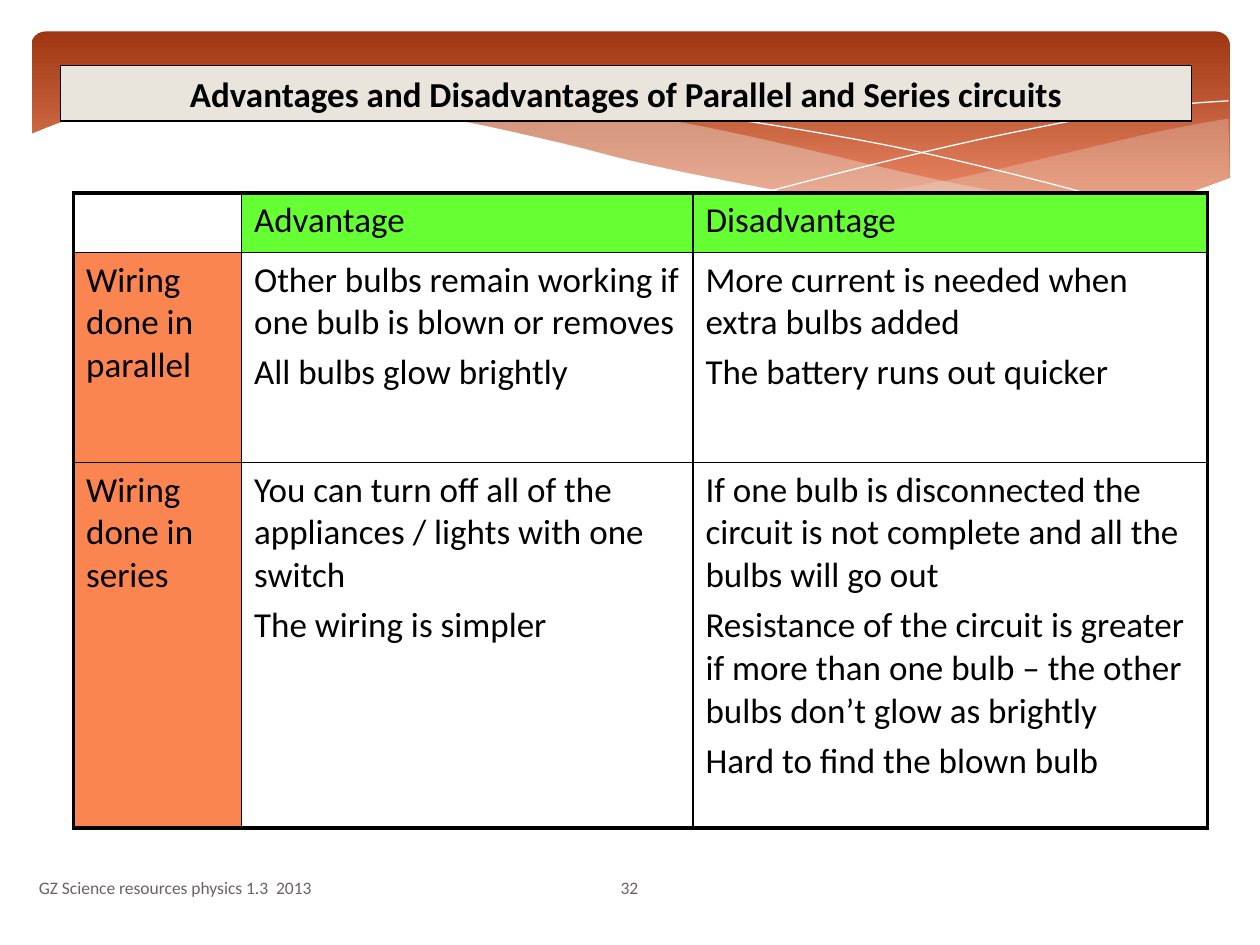
from dataclasses import dataclass

from lxml.etree import SubElement
from pptx import Presentation
from pptx.dml.color import RGBColor
from pptx.enum.shapes import MSO_SHAPE
from pptx.enum.text import MSO_ANCHOR, MSO_AUTO_SIZE, PP_ALIGN
from pptx.oxml.ns import qn
from pptx.util import Pt


@dataclass(frozen=True)
class Theme:
    font: str = "Calibri"
    text_size: float = 20
    footer_size: float = 10
    ink: str = "000000"
    muted: str = "696464"
    paper: str = "FFFFFF"
    sand: str = "E9E5DC"
    rust: str = "9E3611"
    coral: str = "EF8C6A"
    header: str = "66FF33"
    row_label: str = "FA8550"
    outer_rule: float = 2.25
    inner_rule: float = 1


THEME = Theme()

# Banner curves, as points that a smooth line passes through
PALE_WAVE = [(702, 67.7), (663, 75), (620, 85), (542, 103), (476, 115.2),
             (518, 120.2), (554, 123.1), (593, 123.8), (628, 121.7),
             (663, 115.2), (702.7, 101.5)]
BROAD_WAVE = [(643, 120.2), (602.6, 114.5), (558, 107.3), (508, 96.5),
              (453, 83.5), (400, 72), (352, 64), (302, 59), (260, 57.6),
              (206, 61.9), (246, 67.7), (291, 76.3), (353.5, 90.7),
              (407.5, 103), (468, 113.8), (520, 121), (565, 123.8),
              (603, 123.8), (643, 120.2)]
FALLING_LINE = [(222.5, 64.8), (254, 60.5), (299.5, 58.3), (352, 60.5),
                (400, 65.5), (458, 74.2), (523.4, 86.4), (598.3, 104.4),
                (653, 119.5)]
RISING_LINE = [(441.4, 108.7), (500.4, 93.6), (558.7, 79.9), (623.5, 67),
               (665.3, 60.5), (702, 57.6)]
WHITE_EDGE = [(703.4, 101.5), (669.6, 113), (630, 120.2), (582.5, 123.1),
              (535.7, 121), (481, 115.2), (417, 103.7), (362, 92.2),
              (322, 82.1), (263, 69.1), (210, 61.2), (165.6, 56.9),
              (127.4, 56.2), (85.7, 59), (48.2, 65.5), (16.6, 77)]
WHITE_CORNERS = [(16.6, 161.3), (703.4, 161.3)]

TABLE_ROWS = [
    [[], ["Advantage"], ["Disadvantage"]],
    [["Wiring done in parallel"],
     ["Other bulbs remain working if one bulb is blown or removes",
      "All bulbs glow brightly"],
     ["More current is needed when extra bulbs added",
      "The battery runs out quicker"]],
    [["Wiring done in series"],
     ["You can turn off all of the appliances / lights with one switch",
      "The wiring is simpler"],
     ["If one bulb is disconnected the circuit is not complete and all the "
      "bulbs will go out",
      "Resistance of the circuit is greater if more than one bulb – the other "
      "bulbs don’t glow as brightly",
      "Hard to find the blown bulb"]],
]
COLUMN_WIDTHS = [96, 258, 294]
ROW_HEIGHTS = [34, 120, 209]


def color(value):
    return RGBColor.from_string(value)


def write_text(frame, paragraphs, *, size=THEME.text_size, ink=THEME.ink,
               bold=False, align=PP_ALIGN.LEFT, gap=0):
    for index, words in enumerate(paragraphs):
        paragraph = frame.add_paragraph() if index else frame.paragraphs[0]
        paragraph.alignment = align
        paragraph.space_before = Pt(gap if index else 0)
        run = paragraph.add_run()
        run.text = words
        run.font.name = THEME.font
        run.font.size = Pt(size)
        run.font.bold = bold
        run.font.color.rgb = color(ink)


def smooth(points, steps=4):
    """Catmull-Rom curve through the points."""
    padded = [points[0], *points, points[-1]]
    curve = [points[0]]
    for a, b, c, d in zip(padded, padded[1:], padded[2:], padded[3:]):
        for step in range(1, steps + 1):
            t = step / steps
            curve.append(tuple(
                (2 * q + (r - p) * t + (2 * p - 5 * q + 4 * r - s) * t ** 2
                 + (3 * q - p - 3 * r + s) * t ** 3) / 2
                for p, q, r, s in zip(a, b, c, d)))
    return curve


def add_curve(slide, points, *, fill=None, opacity=100, line=None):
    (x, y), *rest = [(Pt(px), Pt(py)) for px, py in points]
    builder = slide.shapes.build_freeform(x, y)
    builder.add_line_segments(rest, close=fill is not None)
    curve = builder.convert_to_shape()
    curve.shadow.inherit = False
    if fill:
        curve.fill.solid()
        curve.fill.fore_color.rgb = color(fill)
        if opacity < 100:
            tint = curve.fill._xPr.find(f"{qn('a:solidFill')}/{qn('a:srgbClr')}")
            SubElement(tint, qn("a:alpha"), val=str(opacity * 1000))
    else:
        curve.fill.background()
    if line:
        curve.line.color.rgb = color(line)
        curve.line.width = Pt(0)
    else:
        curve.line.fill.background()


def add_banner(slide):
    panel = slide.shapes.add_shape(MSO_SHAPE.ROUNDED_RECTANGLE,
                                   Pt(18), Pt(18), Pt(684.7), Pt(112.3))
    panel.adjustments[0] = 0.07
    panel.shadow.inherit = False
    panel.line.fill.background()
    panel.fill.gradient()
    panel.fill.gradient_angle = 270
    stops = zip(panel.fill.gradient_stops, (THEME.rust, THEME.coral), (0, 0.9))
    for stop, shade, position in stops:
        stop.color.rgb = color(shade)
        stop.position = position

    add_curve(slide, smooth(PALE_WAVE), fill=THEME.sand, opacity=29)
    add_curve(slide, smooth(BROAD_WAVE), fill=THEME.sand, opacity=40)
    for crossing in (FALLING_LINE, RISING_LINE):
        add_curve(slide, smooth(crossing), line=THEME.paper)
    add_curve(slide, smooth(WHITE_EDGE) + WHITE_CORNERS, fill=THEME.paper)


def add_title(slide, words):
    title = slide.shapes.title
    slide.shapes._spTree.append(title._element)  # in front of the banner
    title.left, title.top, title.width, title.height = map(
        Pt, (34.5, 37.5, 646.5, 31.6))
    title.fill.solid()
    title.fill.fore_color.rgb = color(THEME.sand)
    title.line.color.rgb = color(THEME.ink)
    title.line.width = Pt(0.75)
    frame = title.text_frame
    frame.auto_size = MSO_AUTO_SIZE.NONE
    frame.vertical_anchor = MSO_ANCHOR.MIDDLE
    write_text(frame, [words], bold=True, align=PP_ALIGN.CENTER)


def add_border(cell, side, width):
    properties = cell._tc.get_or_add_tcPr()
    rule = SubElement(properties, qn(f"a:ln{side}"), w=str(Pt(width)))
    paint = SubElement(rule, qn("a:solidFill"))
    SubElement(paint, qn("a:srgbClr"), val=THEME.ink)


def add_comparison(slide):
    last_row, last_column = len(ROW_HEIGHTS) - 1, len(COLUMN_WIDTHS) - 1
    table = slide.shapes.add_table(
        len(ROW_HEIGHTS), len(COLUMN_WIDTHS), Pt(42), Pt(110.2),
        Pt(sum(COLUMN_WIDTHS)), Pt(sum(ROW_HEIGHTS))).table
    table.first_row = table.horz_banding = False
    for column, width in zip(table.columns, COLUMN_WIDTHS):
        column.width = Pt(width)
    for row, height in zip(table.rows, ROW_HEIGHTS):
        row.height = Pt(height)

    for r, row in enumerate(TABLE_ROWS):
        for c, paragraphs in enumerate(row):
            cell = table.cell(r, c)
            on_edge = {"L": c == 0, "R": c == last_column,
                       "T": r == 0, "B": r == last_row}
            for side, outer in on_edge.items():
                add_border(cell, side,
                           THEME.outer_rule if outer else THEME.inner_rule)
            if paragraphs:
                cell.fill.solid()
                cell.fill.fore_color.rgb = color(
                    THEME.header if r == 0
                    else THEME.row_label if c == 0 else THEME.paper)
            else:
                cell.fill.background()
            write_text(cell.text_frame, paragraphs, gap=4)


def add_footer(slide, words, left, width, align=PP_ALIGN.LEFT):
    footer = slide.shapes.add_textbox(Pt(left), Pt(492.5), Pt(width), Pt(28.8))
    frame = footer.text_frame
    frame.word_wrap = True
    frame.vertical_anchor = MSO_ANCHOR.MIDDLE
    write_text(frame, [words], size=THEME.footer_size, ink=THEME.muted,
               align=align)


def main():
    deck = Presentation()
    deck.slide_width, deck.slide_height = Pt(720), Pt(540)
    slide = deck.slides.add_slide(deck.slide_layouts[5])
    add_banner(slide)
    add_footer(slide, "GZ Science resources physics 1.3  2013", 15.1, 298)
    add_footer(slide, "32", 314, 91.4, PP_ALIGN.CENTER)
    add_comparison(slide)
    add_title(slide, "Advantages and Disadvantages of Parallel and Series circuits")
    deck.save("out.pptx")


if __name__ == "__main__":
    main()
